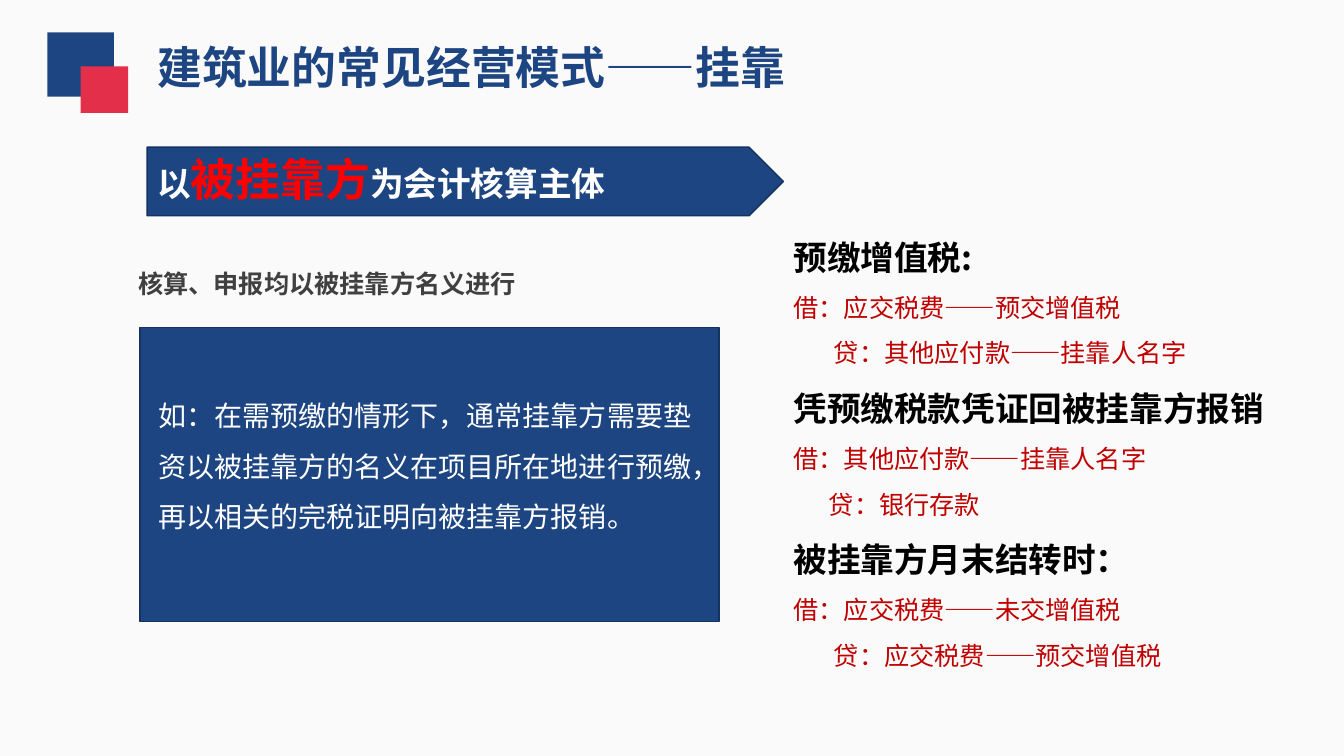
from lxml import etree
from pptx import Presentation
from pptx.dml.color import RGBColor
from pptx.enum.shapes import MSO_SHAPE
from pptx.enum.text import MSO_ANCHOR, MSO_AUTO_SIZE, PP_ALIGN
from pptx.oxml.ns import qn
from pptx.util import Inches, Pt

RECT, ARROW = MSO_SHAPE.RECTANGLE, MSO_SHAPE.PENTAGON
TOP, LEFT, FIXED = MSO_ANCHOR.TOP, PP_ALIGN.LEFT, MSO_AUTO_SIZE.NONE
FONT = "Noto Sans CJK SC"
COLORS = {
    "paper": "FAFAFA", "navy": "1D4582", "edge": "153360", "rose": "E42F4B",
    "white": "FFFFFF", "red": "FF0000", "gray": "404040", "black": "000000",
    "wine": "C00000",
}
STYLES = {
    "title": ("navy", {"size": Pt(32), "bold": True}),
    "lead": ("white", {"size": Pt(24), "bold": True}),
    "stress": ("red", {"size": Pt(32), "bold": True}),
    "label": ("gray", {"size": Pt(18), "bold": True}),
    "case": ("white", {"size": Pt(20), "bold": False}),
    "head": ("black", {"size": Pt(24), "bold": True}),
    "entry": ("wine", {"size": Pt(18), "bold": False}),
}
PLAIN = {"alignment": LEFT, "space_before": Pt(0)}
LOOSE = PLAIN | {"line_spacing": 1.5}
LABEL = LOOSE | {"space_before": Pt(2), "space_after": Pt(0.7)}


def apply(item, values):
    for name, value in values.items():
        setattr(item, name, value)


class Deck:
    def __init__(self):
        self.deck = Presentation()
        apply(self.deck, {"slide_width": Inches(13.33), "slide_height": Inches(7.5)})
        self.slide = self.deck.slides.add_slide(self.deck.slide_layouts[1])
        self.paint(self.slide.background.fill, "paper")

    def paint(self, fill, color):
        fill.solid()
        fill.fore_color.rgb = RGBColor.from_string(COLORS[color])

    def grid(self, col, row, cols, rows):
        wide, high = self.deck.slide_width / 100, self.deck.slide_height / 100
        return [round(n) for n in (col * wide, row * high, cols * wide, rows * high)]

    def block(self, kind, area, fill, edge=None):
        shape = self.slide.shapes.add_shape(kind, *self.grid(*area))
        shape.shadow.inherit = False
        self.paint(shape.fill, fill)
        if edge:
            self.paint(shape.line.fill, edge)
            shape.line.width = Pt(1)
        else:
            shape.line.fill.background()

    def fill(self, frame, lines, form, wrap=True):
        apply(frame, {"word_wrap": wrap, "auto_size": FIXED, "vertical_anchor": TOP})
        for index, runs in enumerate(lines):
            para = frame.add_paragraph() if index else frame.paragraphs[0]
            apply(para, form)
            for text, style in runs:
                run = para.add_run()
                run.text = text
                color, values = STYLES[style]
                apply(run.font, values | {"name": FONT})
                self.paint(run.font.fill, color)
                east = etree.SubElement(run._r.get_or_add_rPr(), qn("a:ea"))
                east.set("typeface", FONT)

    def text(self, area, runs, form):
        box = self.slide.shapes.add_textbox(*self.grid(*area))
        self.fill(box.text_frame, [runs], form)

    def place(self, holder, area):
        apply(holder, dict(zip(("left", "top", "width", "height"), self.grid(*area))))
        return holder.text_frame

    def title(self, area, text):
        frame = self.place(self.slide.shapes.title, area)
        self.fill(frame, [[(text, "title")]], PLAIN, wrap=False)

    def list(self, area, items):
        frame = self.place(self.slide.placeholders[1], area)
        self.fill(frame, [[(text, style)] for text, style, _ in items], LOOSE)
        for para, (_, _, inset) in zip(frame.paragraphs, items):
            props = para._p.get_or_add_pPr()
            props.set("marL", str(Inches(inset)))
            props.set("indent", "0")
            etree.SubElement(props, qn("a:buNone"))


def main():
    deck = Deck()
    deck.block(RECT, (10.43, 43.33, 43.06, 38.93), "navy", "edge")
    deck.block(ARROW, (10.95, 19.47, 47.34, 9.07), "navy", "edge")
    deck.block(RECT, (3.53, 4.27, 4.95, 8.53), "navy")
    deck.block(RECT, (6, 8.8, 3.53, 6.13), "rose")
    deck.title((10.95, 4.53, 49.21, 8.53), "建筑业的常见经营模式——挂靠")
    deck.text((10.95, 19.47, 44.19, 8.53), [
        ("以", "lead"), ("被挂靠方", "stress"), ("为会计核算主体", "lead"),
    ], PLAIN)
    deck.text((9.53, 32.8, 77.42, 6.67),
              [("核算、申报均以被挂靠方名义进行", "label")], LABEL)
    deck.text((11.03, 49.87, 42.38, 20.8), [(
        "如：在需预缴的情形下，通常挂靠方需要垫资以被挂靠方的名义"
        "在项目所在地进行预缴，再以相关的完税证明向被挂靠方报销。", "case",
    )], LOOSE)
    deck.list((58.29, 28, 38.33, 61.2), [
        ("预缴增值税:", "head", 0),
        ("借：应交税费——预交增值税", "entry", 0),
        ("贷：其他应付款——挂靠人名字", "entry", 0.4),
        ("凭预缴税款凭证回被挂靠方报销", "head", 0),
        ("借：其他应付款——挂靠人名字", "entry", 0),
        ("贷：银行存款", "entry", 0.35),
        ("被挂靠方月末结转时：", "head", 0),
        ("借：应交税费——未交增值税", "entry", 0),
        ("贷：应交税费——预交增值税", "entry", 0.4),
    ])
    deck.deck.save("out.pptx")


if __name__ == "__main__":
    main()
